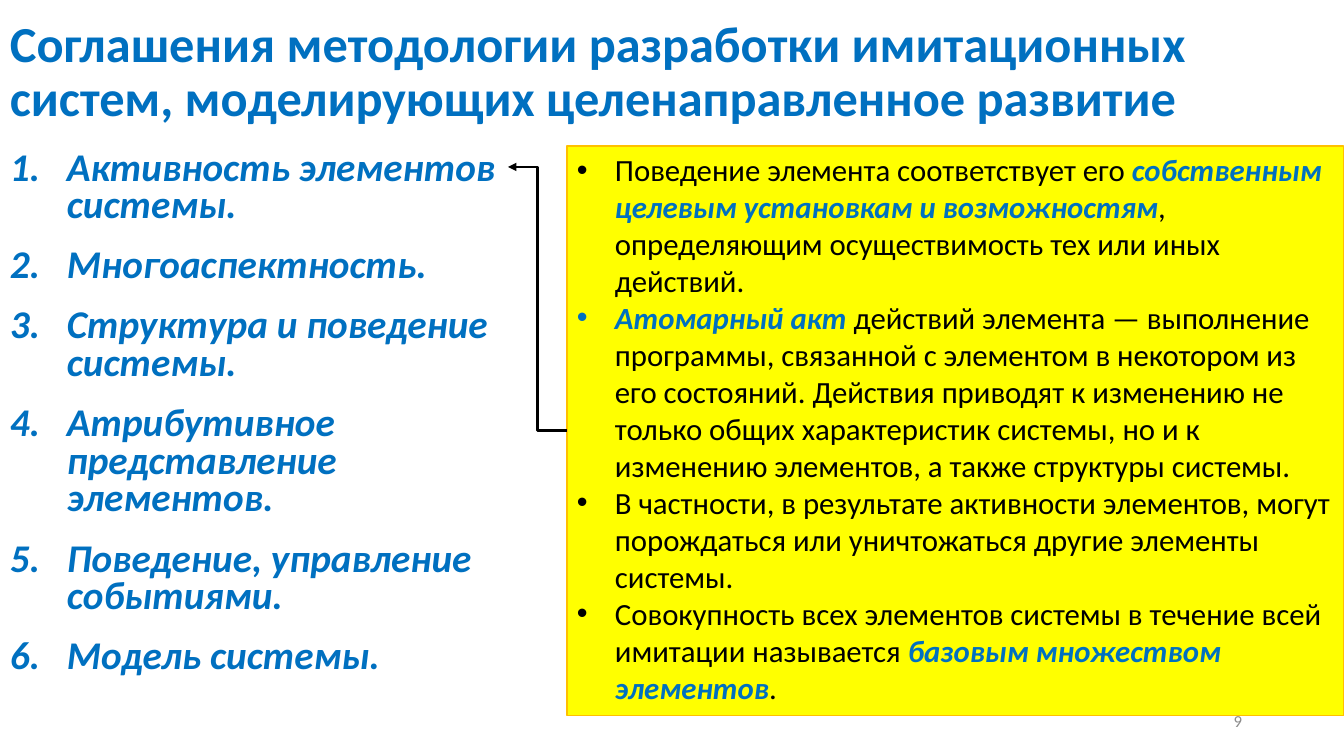
from lxml.etree import SubElement
from pptx import Presentation
from pptx.dml.color import RGBColor
from pptx.enum.shapes import MSO_CONNECTOR as Connector, MSO_SHAPE as Shape
from pptx.enum.text import MSO_ANCHOR as Anchor, PP_ALIGN as Align
from pptx.oxml.ns import qn
from pptx.util import Emu, Pt

COLORS = {
    "accent": "0070C0",
    "text": "000000",
    "panel": "FFFF00",
    "panel_line": "FFC000",
    "number": "8C8C8C",
}
FONT = "Calibri"
EMU_PER_PX = 914400 / 100.8

TITLE = ("Соглашения методологии разработки имитационных систем, "
         "моделирующих целенаправленное развитие")
AGREEMENTS = [
    "Активность элементов\nсистемы.",
    "Многоаспектность.",
    "Структура и поведение\nсистемы.",
    "Атрибутивное\nпредставление\nэлементов.",
    "Поведение, управление\nсобытиями.",
    "Модель системы.",
]
DETAILS = [
    [("Поведение элемента соответствует его ", False),
     ("собственным целевым установкам и возможностям", True),
     (", определяющим осуществимость тех или иных действий.", False)],
    [("Атомарный акт ", True),
     ("действий элемента — выполнение программы, связанной с элементом в "
      "некотором из его состояний. Действия приводят к изменению не только "
      "общих характеристик системы, но и к изменению элементов, а также "
      "структуры системы.", False)],
    [("В частности, в результате активности элементов, могут порождаться "
      "или уничтожаться другие элементы системы.", False)],
    [("Совокупность всех элементов системы в течение всей имитации "
      "называется ", False),
     ("базовым множеством элементов", True),
     (".", False)],
]


def px(length):
    return Emu(round(length * EMU_PER_PX))


def rgb(name):
    return RGBColor.from_string(COLORS[name])


def write(para, text, size, color="text", bold=False, italic=False):
    for index, line in enumerate(text.split("\n")):
        if index:
            para.add_line_break()
        span = para.add_run()
        span.text = line
        span.font.name = FONT
        span.font.size = Pt(size)
        span.font.color.rgb = rgb(color)
        span.font.bold = bold
        span.font.italic = italic


def set_bullet(para, indent, tag, **attributes):
    properties = para._p.get_or_add_pPr()
    properties.set("marL", str(px(indent)))
    properties.set("indent", str(-px(indent)))
    SubElement(properties, qn("a:buFont"), typeface="Arial" if tag == "a:buChar" else "+mj-lt")
    SubElement(properties, qn(tag), **attributes)


def add_paragraphs(frame, count):
    return [frame.paragraphs[0]] + [frame.add_paragraph() for _ in range(count - 1)]


def add_text_frame(page, box, anchor=Anchor.TOP):
    frame = page.shapes.add_textbox(*map(px, box)).text_frame
    frame.word_wrap = True
    frame.vertical_anchor = anchor
    return frame


def add_title(page, box):
    para = add_text_frame(page, box, Anchor.MIDDLE).paragraphs[0]
    para.line_spacing = 0.9
    write(para, TITLE, 36, color="accent", bold=True)


def add_agreements(page, box):
    frame = add_text_frame(page, box)
    for para, text in zip(add_paragraphs(frame, len(AGREEMENTS)), AGREEMENTS):
        para.line_spacing = 0.8
        para.space_before = Pt(10)
        para.space_after = Pt(6)
        set_bullet(para, 57, "a:buAutoNum", type="arabicPeriod")
        write(para, text, 28, color="accent", bold=True, italic=True)


def add_details(page, box):
    panel = page.shapes.add_shape(Shape.RECTANGLE, *map(px, box))
    panel.shadow.inherit = False
    panel.fill.solid()
    panel.fill.fore_color.rgb = rgb("panel")
    panel.line.color.rgb = rgb("panel_line")
    panel.line.width = Pt(0.75)
    frame = panel.text_frame
    frame.word_wrap = True
    frame.vertical_anchor = Anchor.TOP
    for para, parts in zip(add_paragraphs(frame, len(DETAILS)), DETAILS):
        para.alignment = Align.LEFT
        set_bullet(para, 38, "a:buChar", char="•")
        for text, strong in parts:
            write(para, text, 22, color="accent" if strong else "text",
                  bold=strong, italic=strong)


def add_details_arrow(page, box):
    left, top, width, height = box
    arrow = page.shapes.add_connector(
        Connector.ELBOW, px(left + width), px(top + height), px(left), px(top))
    arrow.line.color.rgb = rgb("text")
    arrow.line.width = Pt(2)
    SubElement(arrow.line._get_or_add_ln(), qn("a:tailEnd"), type="triangle")
    SubElement(arrow._element.spPr, qn("a:effectLst"))


def add_page_number(page, box):
    para = add_text_frame(page, box, Anchor.MIDDLE).paragraphs[0]
    para.alignment = Align.RIGHT
    write(para, "9", 12, color="number")


def main():
    deck = Presentation()
    deck.slide_width = px(1344)
    deck.slide_height = px(756)
    page = deck.slides.add_slide(deck.slide_layouts[6])
    add_title(page, (0, 0, 1320, 146))
    add_agreements(page, (0, 146, 1320, 538))
    add_details(page, (567, 146, 777, 570))
    add_details_arrow(page, (508, 167, 59, 264))
    add_page_number(page, (950, 701, 302, 40))
    deck.save("out.pptx")


if __name__ == "__main__":
    main()
